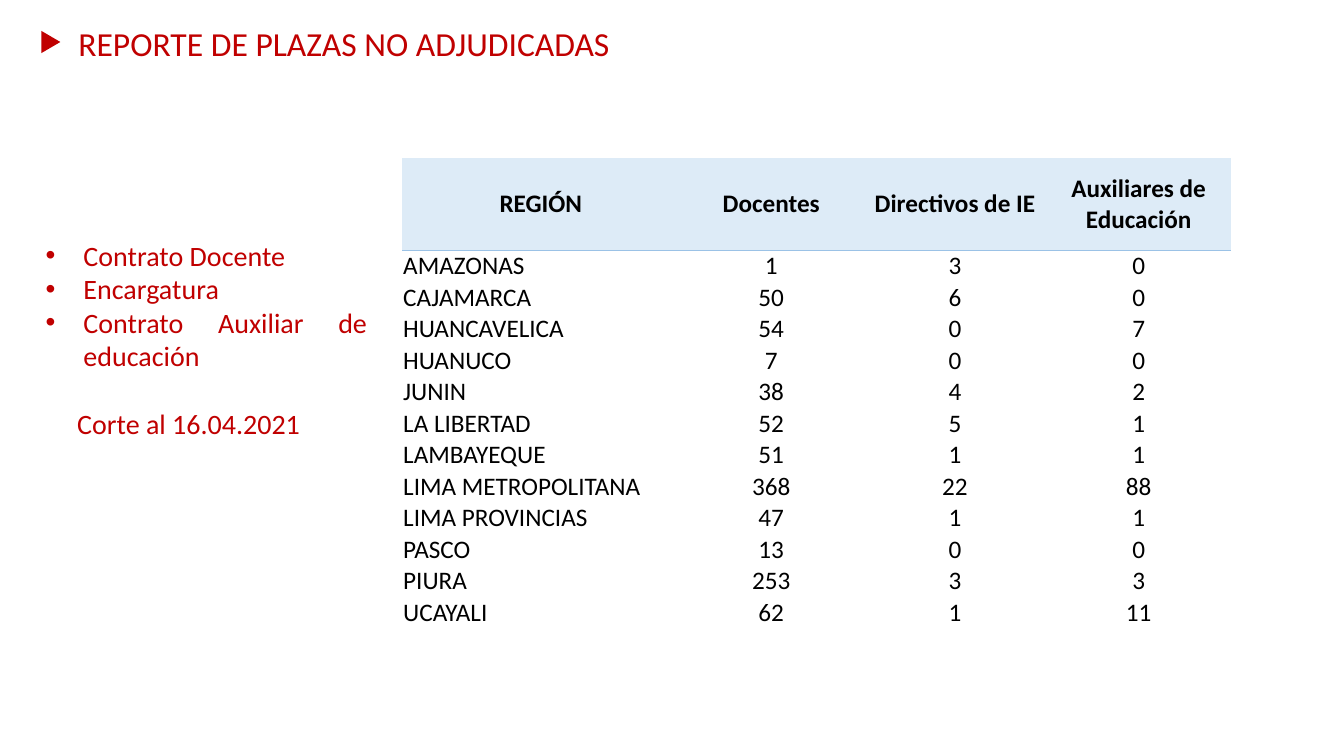
import pptx
import pptx.dml.color
import pptx.enum.shapes
import pptx.enum.text
import pptx.oxml
import pptx.oxml.ns
import pptx.util

PX = 9525  # EMU in one px, 96 px to the inch
COLORS = {"red": "C00000", "black": "000000", "header": "DDEBF7", "rule": "9BC2E6"}
FONT = "Calibri"
NO_GRID_STYLE = "{2D5ABB26-0587-4C30-8999-92F81FD0307C}"
ALIGN = pptx.enum.text.PP_ALIGN
ANCHOR = pptx.enum.text.MSO_ANCHOR

HEADERS = ["REGIÓN", "Docentes", "Directivos de IE", "Auxiliares de Educación"]
REGIONS = [
    ("AMAZONAS", 1, 3, 0),
    ("CAJAMARCA", 50, 6, 0),
    ("HUANCAVELICA", 54, 0, 7),
    ("HUANUCO", 7, 0, 0),
    ("JUNIN", 38, 4, 2),
    ("LA LIBERTAD", 52, 5, 1),
    ("LAMBAYEQUE", 51, 1, 1),
    ("LIMA METROPOLITANA", 368, 22, 88),
    ("LIMA PROVINCIAS", 47, 1, 1),
    ("PASCO", 13, 0, 0),
    ("PIURA", 253, 3, 3),
    ("UCAYALI", 62, 1, 11),
]
CONTRACTS = ["Contrato Docente", "Encargatura", "Contrato Auxiliar de educación"]


def emu(*lengths):
    return [pptx.util.Emu(length * PX) for length in lengths]


def rgb(name):
    return pptx.dml.color.RGBColor.from_string(COLORS[name])


def write(frame, text, *, size, color, align, bold=False, bullet=False,
          margin=0, hanging=0, before=0):
    """Write one paragraph, using the first one while it is still empty."""
    para = frame.paragraphs[0] if not frame.text else frame.add_paragraph()
    properties = para._p.get_or_add_pPr()
    properties.set("marL", str(margin * PX))
    properties.set("indent", str(-hanging * PX))
    if bullet:
        namespace = pptx.oxml.ns.nsdecls("a")
        properties.append(pptx.oxml.parse_xml(f'<a:buFont {namespace} typeface="Arial"/>'))
        properties.append(pptx.oxml.parse_xml(f'<a:buChar {namespace} char="•"/>'))
    para.alignment = align
    if before:
        para.space_before = pptx.util.Pt(before)
    span = para.add_run()
    span.text = text
    span.font.name = FONT
    span.font.size = pptx.util.Pt(size)
    span.font.bold = bold
    span.font.color.rgb = rgb(color)


def add_heading(page, left, top, width, height):
    marker = page.shapes.add_shape(
        pptx.enum.shapes.MSO_SHAPE.ISOSCELES_TRIANGLE, *emu(left, top + 14, 21, 18))
    marker.rotation = 90
    marker.shadow.inherit = False
    marker.fill.solid()
    marker.fill.fore_color.rgb = rgb("red")
    marker.line.fill.background()

    title = page.shapes.title
    title.left, title.top, title.width, title.height = emu(left + 27, top, width - 27, height)
    frame = title.text_frame
    frame.auto_size = pptx.enum.text.MSO_AUTO_SIZE.NONE
    frame.vertical_anchor = ANCHOR.TOP
    write(frame, "REPORTE DE PLAZAS NO ADJUDICADAS", size=24, color="red", align=ALIGN.JUSTIFY)


def add_contracts(page, left, top, width, height):
    frame = page.shapes.add_textbox(*emu(left, top, width, height)).text_frame
    frame.word_wrap = True
    style = {"size": 20, "color": "red", "align": ALIGN.JUSTIFY}
    for contract in CONTRACTS:
        write(frame, contract, bullet=True, margin=36, hanging=36, **style)
    write(frame, "Corte al 16.04.2021", margin=30, before=24, **style)


def add_bottom_rule(cell):
    cell._tc.get_or_add_tcPr().insert(0, pptx.oxml.parse_xml(
        f'<a:lnB {pptx.oxml.ns.nsdecls("a")} w="6350"><a:solidFill>'
        f'<a:srgbClr val="{COLORS["rule"]}"/></a:solidFill></a:lnB>'))


def add_regions(page, left, top, width, height):
    header_height, count_width = 88, 175
    row_height = (height - header_height) // len(REGIONS)
    rows = [HEADERS, *REGIONS]
    table = page.shapes.add_table(
        len(rows), len(HEADERS), *emu(left, top, width, height)).table
    table.first_row = table.horz_banding = False
    table._tbl.tblPr.find(pptx.oxml.ns.qn("a:tableStyleId")).text = NO_GRID_STYLE

    name_width = width - count_width * (len(HEADERS) - 1)
    for index, column in enumerate(table.columns):
        column.width = emu(count_width if index else name_width)[0]
    for index, row in enumerate(table.rows):
        row.height = emu(row_height if index else header_height)[0]

    for row_index, values in enumerate(rows):
        is_header = row_index == 0
        for column_index, value in enumerate(values):
            cell = table.cell(row_index, column_index)
            cell.margin_left, cell.margin_top, cell.margin_right, cell.margin_bottom = emu(1, 1, 1, 0)
            cell.vertical_anchor = ANCHOR.MIDDLE if is_header else ANCHOR.BOTTOM
            centred = is_header or column_index > 0
            write(cell.text_frame, str(value), size=18, color="black", bold=is_header,
                  align=ALIGN.CENTER if centred else ALIGN.LEFT)
            if is_header:
                cell.fill.solid()
                cell.fill.fore_color.rgb = rgb("header")
                add_bottom_rule(cell)
            else:
                cell.fill.background()


def main():
    deck = pptx.Presentation()
    deck.slide_width, deck.slide_height = emu(1280, 720)
    page = deck.slides.add_slide(deck.slide_layouts[5])
    add_heading(page, 38, 17, 883, 48)
    add_contracts(page, 34, 222, 325, 204)
    add_regions(page, 383, 150, 789, 448)
    deck.save("out.pptx")


if __name__ == "__main__":
    main()
